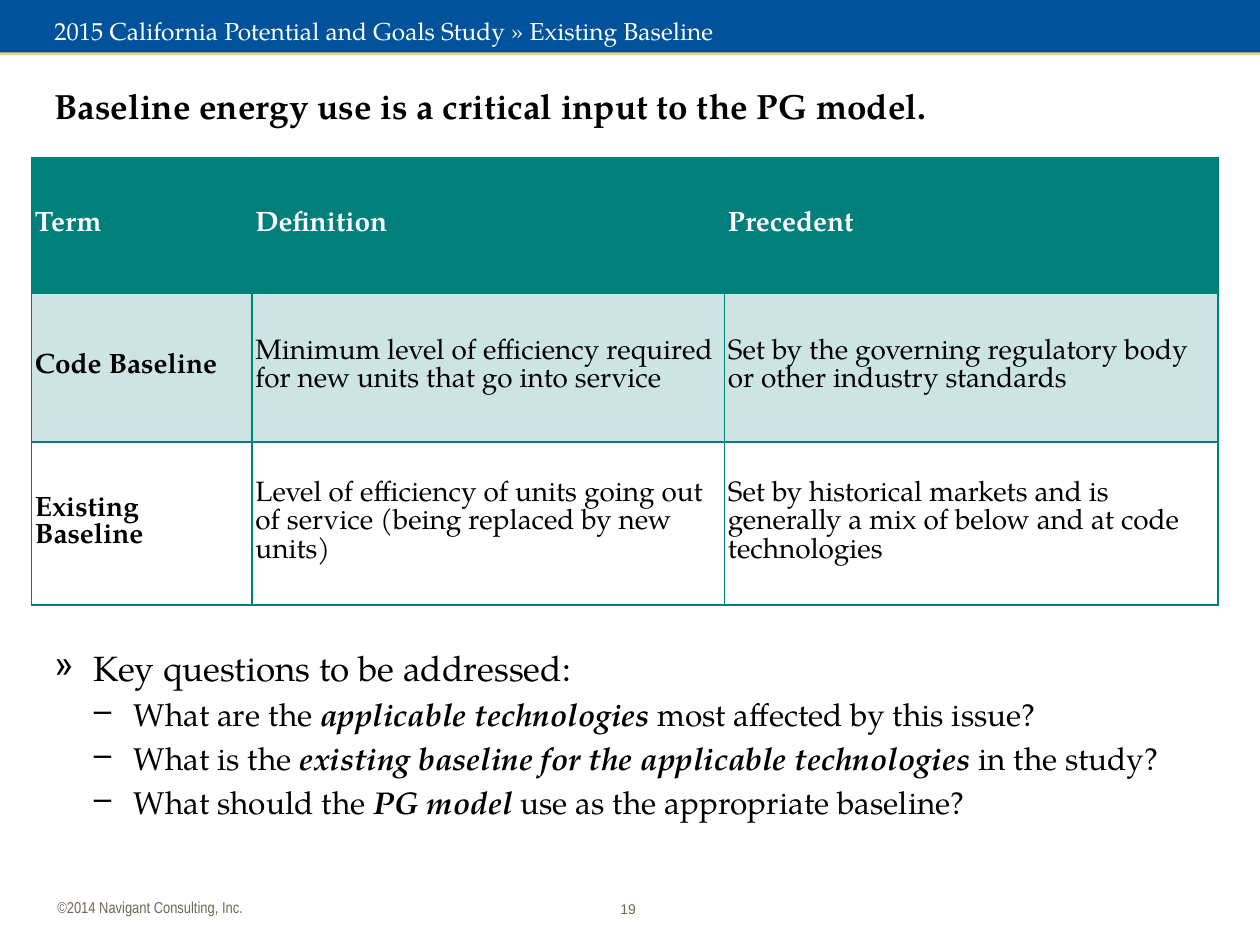
from dataclasses import dataclass

from lxml.etree import SubElement
from pptx import Presentation
from pptx.dml.color import RGBColor
from pptx.enum.shapes import MSO_CONNECTOR, MSO_SHAPE
from pptx.enum.text import MSO_ANCHOR, PP_ALIGN
from pptx.oxml.ns import qn
from pptx.util import Pt


@dataclass(frozen=True)
class Theme:
    serif: str = "TeX Gyre Pagella"
    sans: str = "Arial"
    narrow: str = "Arial Narrow"
    blue: str = "00539B"
    gold: str = "F5D070"
    teal: str = "007F7B"
    gray: str = "6F6754"
    black: str = "000000"
    white: str = "FFFFFF"
    head: int = 20
    sub: int = 18
    cell: int = 16
    top: int = 14
    foot: int = 9
    page: int = 8


T = Theme()
WIDTH, HEIGHT = 720, 540
BAND = 30
COLS = (126, 270, 282)
ROWS = (77, 85.7, 93)
TERMS = (
    ("Term", "Definition", "Precedent"),
    ("Code Baseline",
     "Minimum level of efficiency required for new units that go into service",
     "Set by the governing regulatory body or other industry standards"),
    ("Existing Baseline",
     "Level of efficiency of units going out of service (being replaced by new units)",
     "Set by historical markets and is generally a mix of below and at code technologies"),
)
ASKS = (
    ("What are the ", "applicable technologies ", "most affected by this issue?"),
    ("What is the ", "existing baseline for the applicable technologies ", "in the study?"),
    ("What should the ", "PG model ", "use as the appropriate baseline?"),
)


def rgb(color):
    return RGBColor.from_string(color)


def style(para, size, color=T.black, font=T.serif, bold=False):
    para.font.size = Pt(size)
    para.font.name = font
    para.font.bold = bold
    para.font.color.rgb = rgb(color)


def add_frame(slide, box):
    frame = slide.shapes.add_textbox(*map(Pt, box)).text_frame
    frame.word_wrap = True
    return frame


def add_label(slide, box, text, size, **look):
    frame = add_frame(slide, box)
    para = frame.paragraphs[0]
    para.text = text
    style(para, size, **look)
    return frame


def add_band(slide, box):
    """Blue strip with a gold rule along its lower edge."""
    left, top, width, height = box
    base = top + height
    rule = slide.shapes.add_connector(
        MSO_CONNECTOR.STRAIGHT, *map(Pt, (left + width, base, left, base)))
    rule.line.color.rgb = rgb(T.gold)
    rule.line.width = Pt(3)
    SubElement(rule._element.spPr, qn("a:effectLst"))
    strip = slide.shapes.add_shape(MSO_SHAPE.RECTANGLE, *map(Pt, box))
    strip.shadow.inherit = False
    strip.fill.solid()
    strip.fill.fore_color.rgb = rgb(T.blue)
    strip.line.fill.background()


def add_foot(slide, box):
    left, top, width, height = box
    mid = left + width / 2
    page = add_label(slide, (mid - 19, top + 2, 36, height), "19", T.page,
                     color=T.gray, font=T.sans)
    page.margin_top = page.margin_bottom = Pt(7.2)
    page.paragraphs[0].alignment = PP_ALIGN.CENTER
    add_label(slide, (left + 25.7, top + 2, 274, 18), "©2014 Navigant Consulting, Inc.",
              T.foot, color=T.gray, font=T.narrow)


def set_edge(cell, side, width):
    edge = SubElement(cell._tc.get_or_add_tcPr(), qn(f"a:ln{side}"), w=str(Pt(width)))
    fill = SubElement(edge, qn("a:solidFill"))
    SubElement(fill, qn("a:srgbClr"), val=T.teal)


def fill_cell(cell, row):
    """Solid teal for the head, a faint tint for odd rows, none for the rest."""
    if row and row % 2 == 0:
        cell.fill.background()
        return
    cell.fill.solid()
    cell.fill.fore_color.rgb = rgb(T.teal)
    if row:
        tint = cell._tc.tcPr.find(f"{qn('a:solidFill')}/{qn('a:srgbClr')}")
        SubElement(tint, qn("a:alpha"), val="20000")


def add_terms(slide, box):
    table = slide.shapes.add_table(len(ROWS), len(COLS), *map(Pt, box)).table
    table.horz_banding = False
    for col, width in zip(table.columns, COLS):
        col.width = Pt(width)
    for row, height in zip(table.rows, ROWS):
        row.height = Pt(height)
    for r, texts in enumerate(TERMS):
        for c, text in enumerate(texts):
            cell = table.cell(r, c)
            cell.vertical_anchor = MSO_ANCHOR.MIDDLE
            cell.margin_left = cell.margin_right = Pt(2)
            cell.margin_top = cell.margin_bottom = Pt(2)
            for side in "LRTB":
                set_edge(cell, side, 2 if r == 0 and side == "B" else 1)
            fill_cell(cell, r)
            para = cell.text_frame.paragraphs[0]
            para.text = text
            style(para, T.cell, T.black if r else T.white, bold=r == 0 or c == 0)


def set_bullet(para, mark, left, hang):
    props = para._p.get_or_add_pPr()
    props.set("marL", str(Pt(left)))
    props.set("indent", str(-Pt(hang)))
    SubElement(props, qn("a:buChar"), char=mark)


def add_asks(slide, box):
    frame = add_frame(slide, box)
    lead = frame.paragraphs[0]
    lead.text = "Key questions to be addressed:"
    set_bullet(lead, "»", 22.5, 22.5)
    style(lead, T.head)
    for parts in ASKS:
        para = frame.add_paragraph()
        para.level = 1
        set_bullet(para, "–", 45.2, 22.7)
        para.space_before = Pt(3.6)
        style(para, T.sub)
        for i, part in enumerate(parts):
            run = para.add_run()
            run.text = part
            run.font.bold = run.font.italic = i == 1


def main():
    deck = Presentation()
    deck.slide_width, deck.slide_height = Pt(WIDTH), Pt(HEIGHT)
    slide = deck.slides.add_slide(deck.slide_layouts[6])
    add_band(slide, (0, 0, WIDTH, BAND))
    add_foot(slide, (0, 507.5, WIDTH, 24))
    add_terms(slide, (18, 90, sum(COLS), sum(ROWS)))
    claim = add_label(slide, (24, 36, 670, 48),
                      "Baseline energy use is a critical input to the PG model.",
                      T.head, bold=True)
    claim.vertical_anchor = MSO_ANCHOR.MIDDLE
    add_label(slide, (24, 5.5, 670, 18),
              "2015 California Potential and Goals Study » Existing Baseline",
              T.top, color=T.white)
    add_asks(slide, (24, 366, 672, 120))
    deck.save("out.pptx")


if __name__ == "__main__":
    main()
